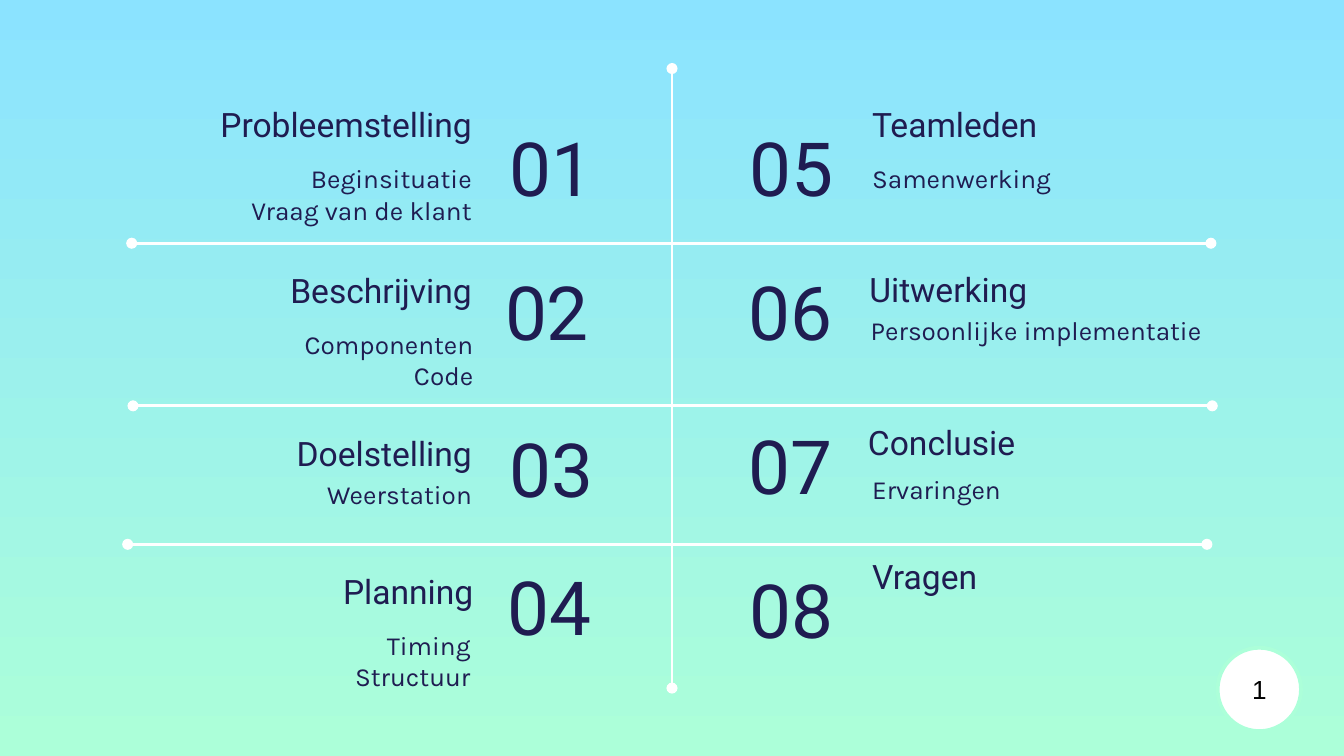
from pptx import Presentation
from pptx import util as u
from pptx.dml.color import RGBColor
from pptx.enum import shapes, text
from pptx.oxml.ns import qn
from lxml import etree

NAVY = RGBColor(0x1F, 0x1C, 0x51)
WHITE = RGBColor(0xFF, 0xFF, 0xFF)
BLACK = RGBColor(0x00, 0x00, 0x00)
SKY = RGBColor(0x8B, 0xE3, 0xFF)
MINT = RGBColor(0xAC, 0xFF, 0xD9)

LEFT, RIGHT = text.PP_ALIGN.LEFT, text.PP_ALIGN.RIGHT
TOP, MIDDLE, BOTTOM = (text.MSO_ANCHOR.TOP, text.MSO_ANCHOR.MIDDLE,
                       text.MSO_ANCHOR.BOTTOM)

LEFT_TOPICS = [
    ("01", (3.69, 0.81), "Probleemstelling", (0.63, 0.67),
     ["Beginsituatie", "Vraag van de klant"], (0.63, 1.11)),
    ("02", (3.66, 1.88), "Beschrijving", (0.63, 1.91),
     ["Componenten", "Code"], (0.64, 2.34)),
    ("03", (3.69, 3.05), "Doelstelling", (0.63, 3.12),
     ["Weerstation"], (0.63, 3.46)),
    ("04", (3.68, 4.08), "Planning", (0.64, 4.15),
     ["Timing", "Structuur"], (0.62, 4.58)),
]
RIGHT_TOPICS = [
    ("05", (5, 0.81), "Teamleden", (6.39, 0.67),
     ["Samenwerking"], (6.39, 1.11)),
    ("06", (4.99, 1.88), "Uitwerking", (6.37, 1.9),
     ["Persoonlijke implementatie"], (6.38, 2.24)),
    ("07", (4.99, 3.03), "Conclusie", (6.36, 3.04),
     ["Ervaringen"], (6.39, 3.42)),
    ("08", (5, 4.1), "Vragen", (6.39, 4.04), [], None),
]
DIVIDERS = [(0.98, 1.81), (0.99, 3.02), (0.95, 4.05)]
DIVIDER_LENGTH = 8.03


def write(frame, lines, size, font="Roboto", color=NAVY, align=LEFT,
          anchor=MIDDLE, inset=0.1):
    """Fill a text frame with one formatted paragraph per line."""
    frame.word_wrap = True
    frame.vertical_anchor = anchor
    frame.margin_left = frame.margin_right = u.Inches(inset)
    frame.margin_top = frame.margin_bottom = u.Inches(inset)
    for index, line in enumerate(lines):
        paragraph = frame.paragraphs[0] if index == 0 else frame.add_paragraph()
        paragraph.alignment = align
        run = paragraph.add_run()
        run.text = line
        run.font.name = font
        run.font.size = u.Pt(size)
        run.font.color.rgb = color


def add_text(slide, position, size, lines, points, **style):
    """Add a text box at a position in inches."""
    box = slide.shapes.add_textbox(*map(u.Inches, (*position, *size)))
    write(box.text_frame, lines, points, **style)


def add_topic(slide, topic, number_align, label_align):
    """Add the number, heading and details of one agenda topic."""
    number, number_at, heading, heading_at, details, details_at = topic
    add_text(slide, number_at, (1.3, 0.86), [number], 40, align=number_align)
    add_text(slide, heading_at, (2.98, 0.5), [heading], 18,
             align=label_align, anchor=BOTTOM)
    if details:
        add_text(slide, details_at, (2.98, 0.69), details, 14, font="Karla",
                 align=label_align, anchor=TOP)


def add_rule(slide, start, end):
    """Add a white line with a dot at both ends."""
    rule = slide.shapes.add_connector(
        shapes.MSO_CONNECTOR.STRAIGHT, *map(u.Inches, (*start, *end)))
    rule.line.color.rgb = WHITE
    rule.line.width = u.Pt(1.5)
    outline = rule.line._get_or_add_ln()
    for tag in ("a:headEnd", "a:tailEnd"):
        etree.SubElement(outline, qn(tag), type="oval")
    etree.SubElement(rule._element.spPr, qn("a:effectLst"))


def add_page_badge(slide, number):
    """Add the round page number."""
    badge = slide.shapes.add_shape(
        shapes.MSO_SHAPE.OVAL, *map(u.Inches, (9.06, 4.82, 0.62, 0.62)))
    badge.shadow.inherit = False
    badge.fill.solid()
    badge.fill.fore_color.rgb = WHITE
    badge.line.color.rgb = MINT
    badge.line.width = u.Pt(2)
    write(badge.text_frame, [number], 14, font="Arial", color=BLACK,
          align=text.PP_ALIGN.CENTER, inset=0)


def paint_background(slide):
    """Give the slide a gradient from sky at the top to mint at the bottom."""
    fill = slide.background.fill
    fill.gradient()
    fill.gradient_angle = 270
    for stop, color, position in zip(fill.gradient_stops, (SKY, MINT), (0, 1)):
        stop.color.rgb = color
        stop.position = position


def main():
    """Build the agenda slide."""
    deck = Presentation()
    deck.slide_width = u.Inches(10)
    deck.slide_height = deck.slide_width * 9 // 16
    slide = deck.slides.add_slide(deck.slide_layouts[6])
    paint_background(slide)
    add_rule(slide, (5, 0.51), (5, 5.12))
    for x, y in DIVIDERS:
        add_rule(slide, (x, y), (x + DIVIDER_LENGTH, y))
    for topic in LEFT_TOPICS:
        add_topic(slide, topic, number_align=LEFT, label_align=RIGHT)
    for topic in RIGHT_TOPICS:
        add_topic(slide, topic, number_align=RIGHT, label_align=LEFT)
    add_page_badge(slide, "1")
    deck.save("out.pptx")


if __name__ == "__main__":
    main()
